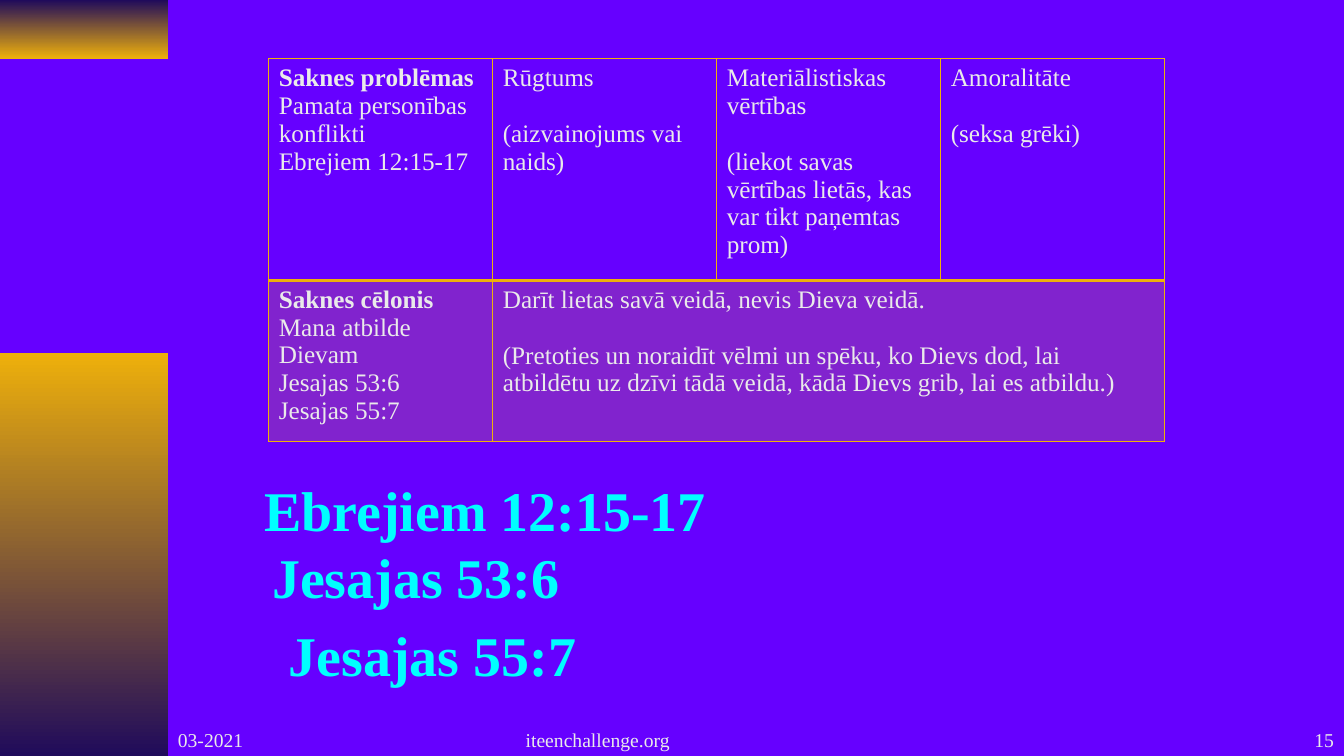
from lxml import etree
from pptx import Presentation
from pptx.dml.color import RGBColor
from pptx.enum.shapes import MSO_SHAPE
from pptx.enum.text import MSO_ANCHOR, MSO_AUTO_SIZE, PP_ALIGN
from pptx.oxml.ns import qn
from pptx.util import Pt

RECTANGLE = MSO_SHAPE.RECTANGLE
TOP, BOTTOM = MSO_ANCHOR.TOP, MSO_ANCHOR.BOTTOM
LEFT, CENTER, RIGHT = PP_ALIGN.LEFT, PP_ALIGN.CENTER, PP_ALIGN.RIGHT
FIT_SHAPE = MSO_AUTO_SIZE.SHAPE_TO_FIT_TEXT

VIOLET = RGBColor(0x66, 0x00, 0xFF)
NAVY = RGBColor(0x20, 0x0B, 0x5B)
GOLD = RGBColor(0xEE, 0xB0, 0x0B)
PALE = RGBColor(0xEA, 0xEA, 0xEA)
CYAN = RGBColor(0x00, 0xFF, 0xFF)

FONT = "Times New Roman"
CELL_FORMAT = {"name": FONT, "size": Pt(18), "bold": False}
VERSE_FORMAT = {"name": FONT, "size": Pt(40), "bold": True}
FOOTER_FORMAT = {"name": FONT, "size": Pt(14), "bold": False}
BLANK_LINE = Pt(20)

# Each cell: paragraphs, whether the first is a bold heading
ROOT_PROBLEMS = [
    (["Saknes problēmas", "Pamata personības konflikti", "Ebrejiem 12:15-17"], True),
    (["Rūgtums", "(aizvainojums vai naids)"], False),
    (["Materiālistiskas vērtības",
      "(liekot savas vērtības lietās, kas var tikt paņemtas prom)"], False),
    (["Amoralitāte", "(seksa grēki)"], False),
]
ROOT_CAUSE = [
    (["Saknes cēlonis", "Mana atbilde Dievam", "Jesajas 53:6", "Jesajas 55:7"], True),
    (["Darīt lietas savā veidā, nevis Dieva veidā.",
      "(Pretoties un noraidīt vēlmi un spēku, ko Dievs dod, lai atbildētu uz "
      "dzīvi tādā veidā, kādā Dievs grib, lai es atbildu.)"], False),
]
VERSES = [
    ("Ebrejiem 12:15-17", 0, 0, 333),
    ("Jesajas 53:6", 6, 48, 222),
    ("Jesajas 55:7", 18, 104, 222),
]


def format_font(font, values, color):
    for key, value in values.items():
        setattr(font, key, value)
    font.color.rgb = color


def add_label(slide, text, left, top, width, height, values, color, align):
    label = slide.shapes.add_textbox(Pt(left), Pt(top), Pt(width), Pt(height))
    paragraph = label.text_frame.paragraphs[0]
    paragraph.text = text
    paragraph.alignment = align
    format_font(paragraph.runs[0].font, values, color)
    return label.text_frame


def add_sidebar(slide, left, top, width, height):
    """Two gradient bands with a gap between them."""
    bands = [(0, 42, NAVY, GOLD), (252, height - 252, GOLD, NAVY)]
    for offset, band_height, upper, lower in bands:
        band = slide.shapes.add_shape(
            RECTANGLE, Pt(left), Pt(top + offset), Pt(width), Pt(band_height))
        band.shadow.inherit = False
        band.line.fill.background()
        band.fill.gradient()
        band.fill.gradient_angle = 270
        for stop, color, position in zip(band.fill.gradient_stops, (upper, lower), (0, 1)):
            stop.color.rgb = color
            stop.position = position


def set_borders(cell, widths):
    properties = cell._tc.get_or_add_tcPr()
    for side, width in widths.items():
        line = etree.SubElement(properties, qn(f"a:ln{side}"), w=str(Pt(width)))
        fill = etree.SubElement(line, qn("a:solidFill"))
        etree.SubElement(fill, qn("a:srgbClr"), val=str(GOLD))


def fill_cell(cell, paragraphs, has_heading):
    frame = cell.text_frame
    cell.vertical_anchor = TOP
    for index, text in enumerate(paragraphs):
        paragraph = frame.paragraphs[0] if index == 0 else frame.add_paragraph()
        paragraph.text = text
        paragraph.alignment = LEFT
        font = paragraph.runs[0].font
        format_font(font, CELL_FORMAT, PALE)
        if index == 0:
            font.bold = has_heading
        elif not has_heading:
            paragraph.space_before = BLANK_LINE


def add_roots_table(slide, left, top, width, row_heights):
    columns = len(ROOT_PROBLEMS)
    table = slide.shapes.add_table(
        len(row_heights), columns, Pt(left), Pt(top), Pt(width), Pt(sum(row_heights))).table
    table.first_row = table.horz_banding = False
    for column in table.columns:
        column.width = Pt(width / columns)
    for row, height in zip(table.rows, row_heights):
        row.height = Pt(height)

    # Borders and fills
    for cell in table.rows[0].cells:
        set_borders(cell, {"L": 1, "R": 1, "T": 1, "B": 2})
        cell.fill.background()
    for cell in table.rows[1].cells:
        set_borders(cell, {"L": 1, "R": 1, "T": 2, "B": 1})
        cell.fill.solid()
        cell.fill.fore_color.rgb = GOLD
        tint = cell._tc.tcPr.find(qn("a:solidFill")).find(qn("a:srgbClr"))
        etree.SubElement(tint, qn("a:alpha"), val="20000")
    table.cell(1, 1).merge(table.cell(1, columns - 1))

    # Wording
    for row, contents in enumerate((ROOT_PROBLEMS, ROOT_CAUSE)):
        for column, (paragraphs, has_heading) in enumerate(contents):
            fill_cell(table.cell(row, column), paragraphs, has_heading)


def add_verses(slide, left, top, height):
    for verse, indent, drop, width in VERSES:
        frame = add_label(slide, verse, left + indent, top + drop, width, height,
                          VERSE_FORMAT, CYAN, CENTER)
        frame.word_wrap = False
        frame.auto_size = FIT_SHAPE


def add_footer(slide, left, top, width, height):
    parts = [
        ("03-2021", left, 200, LEFT),
        ("iteenchallenge.org", left + 106, 402, CENTER),
        ("15", left + width - 200, 200, RIGHT),
    ]
    for text, part_left, part_width, align in parts:
        frame = add_label(slide, text, part_left, top, part_width, height,
                          FOOTER_FORMAT, PALE, align)
        frame.word_wrap = True
        frame.vertical_anchor = BOTTOM


def main():
    deck = Presentation()
    deck.slide_width, deck.slide_height = Pt(960), Pt(540)
    slide = deck.slides.add_slide(deck.slide_layouts[6])
    slide.background.fill.solid()
    slide.background.fill.fore_color.rgb = VIOLET
    add_sidebar(slide, 0, 0, 120, 540)
    add_roots_table(slide, 192, 42, 640, (158.4, 115.2))
    add_verses(slide, 180, 336, 55.5)
    add_footer(slide, 120, 504, 840, 36)
    deck.save("out.pptx")


if __name__ == "__main__":
    main()
